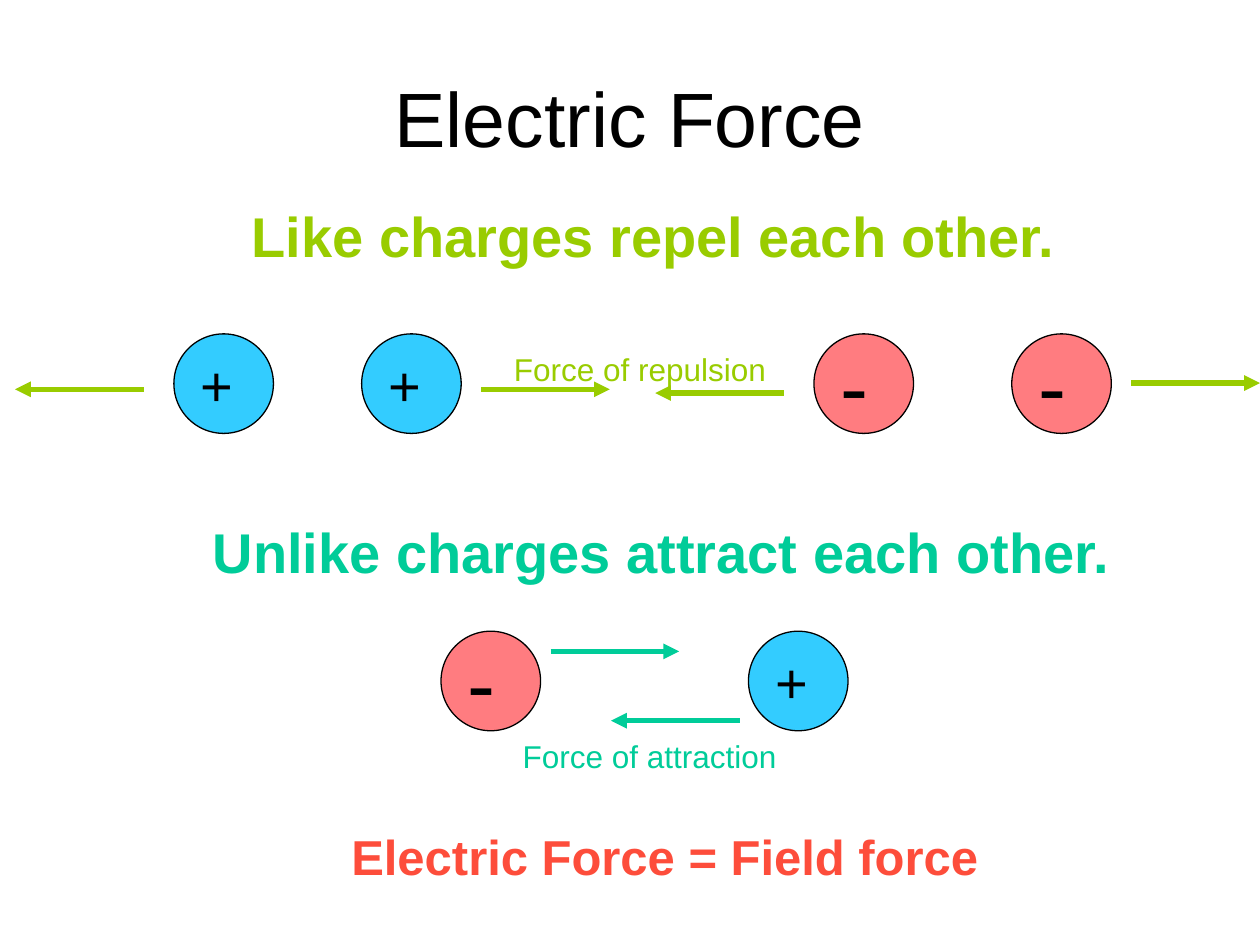
from lxml import etree
from pptx import Presentation
from pptx import util as u
from pptx.dml.color import RGBColor
from pptx.enum import shapes, text
from pptx.oxml.ns import qn

COLUMNS, ROWS = 100, 75
BLACK, GREEN, TEAL, RED = "000000", "99CC00", "00CC99", "FD4D3B"
CHARGES = {"+": ("33CCFF", 32), "-": ("FF7C80", 48)}  # sign: fill, text size


def color(value):
    return RGBColor.from_string(value)


class ForceSlide:
    font = "Arial"
    charge_size = 7.9
    arrow_length = 10.2

    def __init__(self, presentation):
        self.slide = presentation.slides.add_slide(presentation.slide_layouts[1])
        self.column = presentation.slide_width / COLUMNS
        self.row = presentation.slide_height / ROWS

    def box(self, left, top, width, height):
        return (u.Emu(round(left * self.column)), u.Emu(round(top * self.row)),
                u.Emu(round(width * self.column)), u.Emu(round(height * self.row)))

    def place(self, shape, *cells):
        shape.left, shape.top, shape.width, shape.height = self.box(*cells)
        shape.text_frame.auto_size = text.MSO_AUTO_SIZE.NONE

    def format(self, paragraph, size, ink, bold=False):
        for run in paragraph.runs:
            run.font.name, run.font.size, run.font.bold = self.font, u.Pt(size), bold
            run.font.color.rgb = color(ink)

    def title(self, words, *cells):
        shape = self.slide.shapes.title
        self.place(shape, *cells)
        shape.text_frame.text = words
        shape.text_frame.vertical_anchor = text.MSO_ANCHOR.MIDDLE
        self.format(shape.text_frame.paragraphs[0], 44, BLACK)

    def statements(self, lines, *cells):
        shape = self.slide.placeholders[1]
        self.place(shape, *cells)
        frame = shape.text_frame
        frame.text = "\n".join(words for words, _, _ in lines)
        for paragraph, (_, ink, space) in zip(frame.paragraphs, lines):
            paragraph.alignment = text.PP_ALIGN.CENTER
            paragraph.space_before = u.Pt(space)
            properties = paragraph._p.get_or_add_pPr()
            properties.set("marL", str(u.Inches(0.67)))
            properties.set("indent", "0")
            etree.SubElement(properties, qn("a:buNone"))
            self.format(paragraph, 32, ink, bold=True)

    def charge(self, sign, left, top):
        fill, size = CHARGES[sign]
        shape = self.slide.shapes.add_shape(
            shapes.MSO_SHAPE.OVAL,
            *self.box(left, top, self.charge_size, self.charge_size))
        shape.shadow.inherit = False
        shape.fill.solid()
        shape.fill.fore_color.rgb = color(fill)
        shape.line.color.rgb = color(BLACK)
        shape.line.width = u.Pt(0.75)
        frame = shape.text_frame
        frame.text = sign
        frame.word_wrap = False
        frame.vertical_anchor = text.MSO_ANCHOR.MIDDLE
        frame.paragraphs[0].alignment = text.PP_ALIGN.LEFT
        self.format(frame.paragraphs[0], size, BLACK)

    def arrow(self, start, row, direction, ink):
        left, top, length, _ = self.box(start, row, direction * self.arrow_length, 0)
        connector = self.slide.shapes.add_connector(
            shapes.MSO_CONNECTOR.STRAIGHT, left, top, left + length, top)
        connector.line.color.rgb = color(ink)
        connector.line.width = u.Pt(3)
        etree.SubElement(connector.line._get_or_add_ln(), qn("a:tailEnd"), type="triangle")
        etree.SubElement(connector._element.spPr, qn("a:effectLst"))

    def label(self, words, cells, size, ink, bold=False):
        frame = self.slide.shapes.add_textbox(*self.box(*cells)).text_frame
        frame.text = words
        frame.word_wrap = False
        frame.auto_size = text.MSO_AUTO_SIZE.SHAPE_TO_FIT_TEXT
        self.format(frame.paragraphs[0], size, ink, bold)


def main():
    presentation = Presentation()
    presentation.slide_width, presentation.slide_height = u.Inches(10), u.Inches(7.5)
    page = ForceSlide(presentation)

    # Title and the two rules
    page.title("Electric Force", 5, 3, 90, 12.5)
    page.statements([("Like charges repel each other. ", GREEN, 4),
                     ("Unlike charges attract each other.", TEAL, 142)],
                    2.7, 15.5, 92.9, 49.5)

    # Charges: like pairs above, unlike pair below
    for top, pairs in ((26.5, (("+", 13.8), ("+", 28.7), ("-", 64.6), ("-", 80.3))),
                       (50.1, (("-", 35), ("+", 59.4)))):
        for sign, left in pairs:
            page.charge(sign, left, top)

    # Force arrows: start, row, direction
    for ink, arrows in ((TEAL, ((43.7, 51.7, 1), (58.7, 57.2, -1))),
                        (GREEN, ((38.2, 30.9, 1), (89.8, 30.4, 1),
                                 (62.2, 31.2, -1), (11.4, 30.9, -1)))):
        for start, row, direction in arrows:
            page.arrow(start, row, direction, ink)

    # Labels and conclusion
    page.label("Force of repulsion", (39.8, 27.3, 23.2, 4), 18, GREEN)
    page.label("Force of attraction", (40.5, 58, 24.7, 4), 18, TEAL)
    page.label("Electric Force = Field force", (26.9, 65.1, 52.4, 5.7), 28, RED, bold=True)

    presentation.save("out.pptx")


if __name__ == "__main__":
    main()
